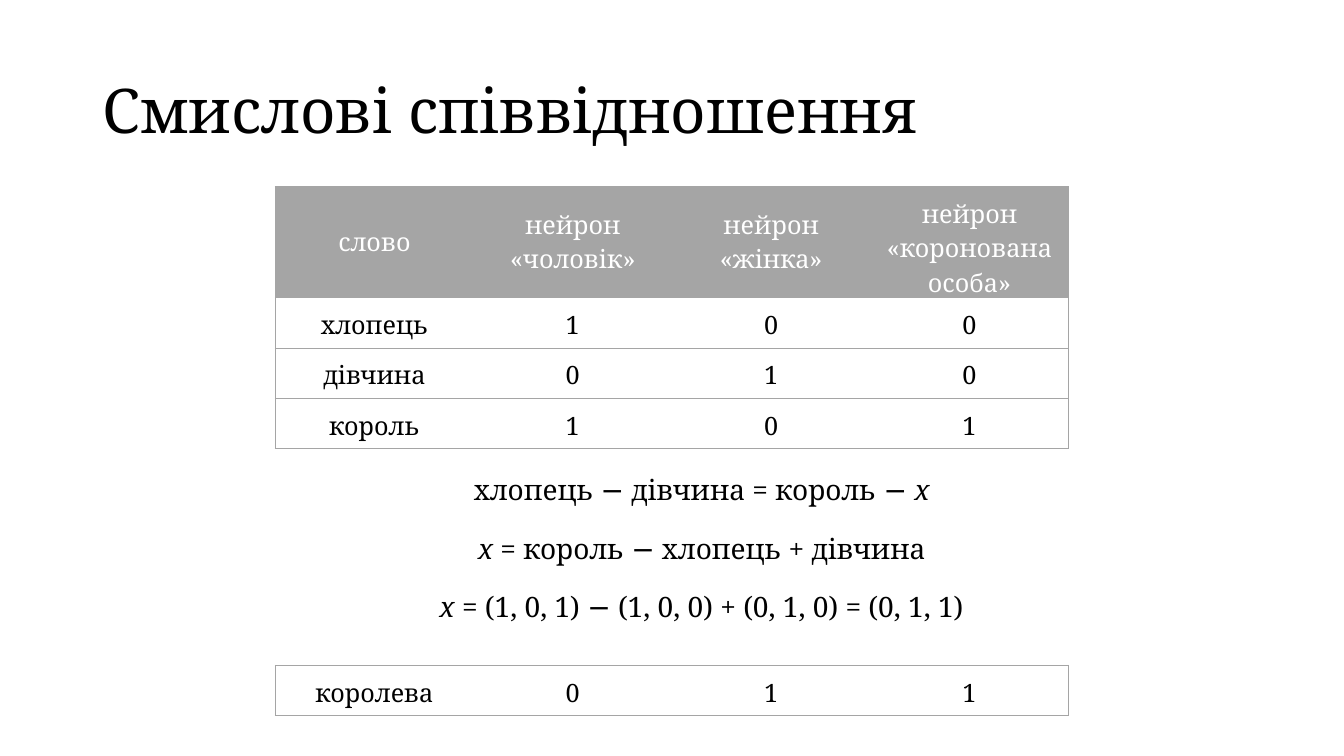
from lxml import etree
from pptx import Presentation
from pptx.dml.color import RGBColor
from pptx.enum.text import MSO_ANCHOR as Anchor, PP_ALIGN as Align
from pptx.oxml.ns import qn
from pptx.util import Inches, Pt

FONT = "Noto Serif"
BLACK, WHITE, GRAY = "000000", "FFFFFF", "A5A5A5"

HEADING = "Смислові співвідношення"
NEURONS = ["слово", "нейрон «чоловік»", "нейрон «жінка»", "нейрон «коронована особа»"]
WORDS = [
    ["хлопець", "1", "0", "0"],
    ["дівчина", "0", "1", "0"],
    ["король", "1", "0", "1"],
]
QUEEN = ["королева", "0", "1", "1"]
EQUATIONS = [
    ["хлопець − дівчина = король − ", "x"],
    ["x", " = король − хлопець + дівчина"],
    ["x", " = (1, 0, 1) − (1, 0, 0) + (0, 1, 0) = (0, 1, 1)"],
]

TABLE_LEFT, TABLE_WIDTH, ROW_HEIGHT = 2.73, 7.87, 0.41


def color(value):
    return RGBColor.from_string(value)


def style(run, size, value):
    run.font.name = FONT
    run.font.size = Pt(size)
    run.font.color.rgb = color(value)


def add_border(cell, side, visible):
    line = etree.SubElement(cell._tc.get_or_add_tcPr(), qn("a:ln" + side), w=str(Pt(0.5)))
    if visible:
        fill = etree.SubElement(line, qn("a:solidFill"))
        etree.SubElement(fill, qn("a:srgbClr"), val=GRAY)
    else:
        etree.SubElement(line, qn("a:noFill"))


def add_word_table(slide, rows, top, height, has_header):
    columns = len(rows[0])
    frame = slide.shapes.add_table(
        len(rows), columns, Inches(TABLE_LEFT), Inches(top), Inches(TABLE_WIDTH), Inches(height))
    table = frame.table
    table.first_row = has_header
    table.horz_banding = False
    for r, row in enumerate(rows):
        table.rows[r].height = Inches(ROW_HEIGHT)
        is_header = has_header and r == 0
        for c, word in enumerate(row):
            cell = table.cell(r, c)
            cell.text_frame.text = word
            cell.vertical_anchor = Anchor.MIDDLE
            cell.margin_left = cell.margin_right = Inches(0.1)
            cell.margin_top = cell.margin_bottom = Inches(0.1)
            paragraph = cell.text_frame.paragraphs[0]
            paragraph.alignment = Align.CENTER
            style(paragraph.runs[0], 18, WHITE if is_header else BLACK)
            paragraph.runs[0].font.bold = False
            for side, visible in (("L", c == 0), ("R", c == columns - 1), ("T", True), ("B", True)):
                add_border(cell, side, visible)
            if is_header:
                cell.fill.solid()
                cell.fill.fore_color.rgb = color(GRAY)
            else:
                cell.fill.background()
    frame.height = Inches(height)


def add_heading(slide):
    box = slide.shapes.add_textbox(Inches(0.92), Inches(0.4), Inches(11.5), Inches(1.45))
    frame = box.text_frame
    frame.word_wrap = True
    frame.vertical_anchor = Anchor.MIDDLE
    frame.text = HEADING
    frame.paragraphs[0].line_spacing = 0.9
    style(frame.paragraphs[0].runs[0], 44, BLACK)


def add_equations(slide):
    box = slide.shapes.add_textbox(Inches(4.25), Inches(4.68), Inches(5.42), Inches(1.67))
    frame = box.text_frame
    frame.word_wrap = False
    for i, parts in enumerate(EQUATIONS):
        paragraph = frame.add_paragraph() if i else frame.paragraphs[0]
        paragraph.alignment = Align.CENTER
        paragraph.space_before = Pt(10 if i else 0)
        paragraph.space_after = Pt(10)
        paragraph.line_spacing = 0.9
        for part in parts:
            run = paragraph.add_run()
            run.text = part
            style(run, 20, BLACK)
            run.font.italic = part == "x"


def main():
    deck = Presentation()
    deck.slide_width, deck.slide_height = Inches(13.33), Inches(7.5)
    slide = deck.slides.add_slide(deck.slide_layouts[6])
    add_heading(slide)
    add_word_table(slide, [NEURONS] + WORDS, 1.85, 2.59, True)
    add_equations(slide)
    add_word_table(slide, [QUEEN], 6.6, 0.5, False)
    deck.save("out.pptx")


if __name__ == "__main__":
    main()
